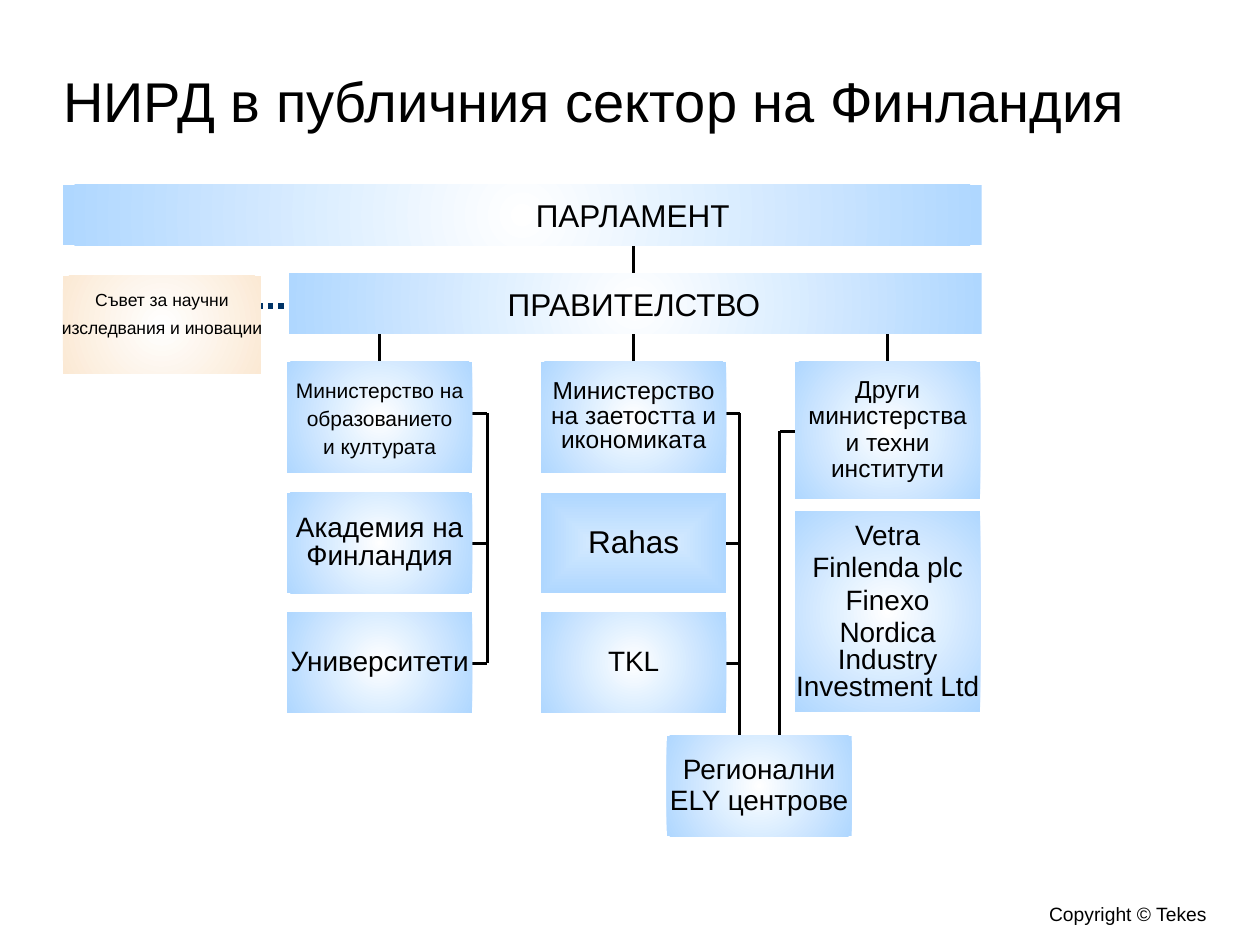
from dataclasses import dataclass, field
from typing import Any

from lxml.etree import SubElement
from pptx import Presentation
from pptx.dml.color import RGBColor
from pptx.enum.dml import MSO_LINE
from pptx.enum.shapes import MSO_CONNECTOR, MSO_SHAPE
from pptx.enum.text import MSO_ANCHOR, MSO_AUTO_SIZE, PP_ALIGN
from pptx.oxml import parse_xml
from pptx.oxml.ns import nsdecls, qn
from pptx.util import Cm, Pt


@dataclass(frozen=True)
class Theme:
    font: str = "Arial"
    ink: str = "000000"
    navy: str = "003366"
    white: str = "FFFFFF"
    pale: str = "D3E9FF"
    blue: str = "AFD7FF"
    sand: str = "FBE9D4"
    title: int = 32
    head: int = 18
    body: int = 16
    mid: int = 14
    small: int = 12
    foot: int = 11
    tiny: int = 10


THEME = Theme()


@dataclass(frozen=True)
class Box:
    """A gradient box; lengths in centimetres, a gap in points between paragraphs."""
    left: float
    top: float
    width: float
    height: float
    lines: tuple[str, ...]
    size: int = THEME.body
    lead: Any = 0.9
    gap: float = 0
    inner: str = THEME.white
    outer: str = THEME.blue
    blend: str = "circle"
    frame: dict[str, Any] = field(default_factory=dict)


@dataclass(frozen=True)
class Line:
    x1: float
    y1: float
    x2: float
    y2: float
    color: str = THEME.ink
    width: float = 1.75
    dash: Any = None


LEFT = 1.27
COLS = [5.79 + 5.12 * i for i in range(3)]
ROWS = [7.29, 9.93, 12.34]
WIDE, HIGH, TALL = 3.73, 2.03, 2.24
MIDS = [col + WIDE / 2 for col in COLS]
LINKS = [8.33, 10.95, 13.37]
STUB = 0.54
NARROW = {"margin_left": Cm(0.1), "margin_right": Cm(0.1), "word_wrap": True}

BOXES = [
    Box(LEFT, 3.73, 18.52, 1.22, ("ПАРЛАМЕНТ",), THEME.head, 1.0,
        frame={"margin_left": Cm(4.45)}),
    Box(5.82, 5.51, 13.97, 1.22, ("ПРАВИТЕЛСТВО",), THEME.head, 1.0,
        frame={"margin_right": Cm(0.05)}),
    Box(LEFT, 5.56, 3.99, 1.98, ("Съвет за научни", "изследвания и иновации"),
        THEME.tiny, Pt(16), outer=THEME.sand,
        frame={"vertical_anchor": MSO_ANCHOR.TOP, "margin_top": Cm(0.13)}),
    Box(COLS[0], ROWS[0], WIDE, TALL,
        ("Министерство на", "образованието", "и културата"), THEME.small, Pt(16)),
    Box(COLS[0], ROWS[1], WIDE, HIGH, ("Академия на", "Финландия"), lead=Pt(16)),
    Box(COLS[0], ROWS[2], WIDE, HIGH, ("Университети",)),
    Box(COLS[1], ROWS[0], WIDE, TALL, ("Министерство на заетостта и икономиката",),
        THEME.mid, Pt(14), frame=NARROW),
    Box(COLS[1], ROWS[1], WIDE, HIGH, ("Rahas",), THEME.head,
        inner=THEME.pale, blend="shape"),
    Box(COLS[1], ROWS[2], WIDE, HIGH, ("TKL",)),
    Box(COLS[2], ROWS[0], WIDE, 2.77,
        ("Други", "министерства", "и техни", "институти"), THEME.mid),
    Box(COLS[2], 10.31, WIDE, 4.04,
        ("Vetra", "Finlenda plc", "Finexo", "Nordica\nIndustry\nInvestment Ltd"),
        lead=0.8, gap=3.2,
        frame={"vertical_anchor": MSO_ANCHOR.TOP, "margin_top": Cm(0.25)}),
    Box(13.44, 14.83, WIDE, HIGH, ("Регионални\nELY центрове",)),
]


def fork(x: float, end: float) -> list[Line]:
    """A trunk at x down to end, with a stub to each box on its left."""
    return [Line(x - STUB, y, x, y) for y in LINKS] + [Line(x, LINKS[0], x, end)]


LINES = [
    Line(4.55, 6.17, 5.89, 6.17, THEME.navy, 3, MSO_LINE.ROUND_DOT),
    Line(MIDS[1], 4.93, MIDS[1], 5.6),
    *(Line(x, 6.6, x, 7.65) for x in MIDS),
    *fork(9.82, LINKS[-1]),
    *fork(14.91, 16.2),
    Line(16.26, 8.69, 15.72, 8.69),
    Line(15.72, 8.69, 15.72, 15.95),
]


def assign(target: Any, values: dict[str, Any]) -> None:
    for name, value in values.items():
        setattr(target, name, value)


def write(shape: Any, lines: tuple[str, ...], size: int, frame: dict[str, Any],
          para: dict[str, Any], gap: float = 0) -> None:
    text = shape.text_frame
    sides = ("left", "top", "right", "bottom")
    assign(text, {f"margin_{side}": 0 for side in sides}
           | {"word_wrap": False, "auto_size": MSO_AUTO_SIZE.NONE,
              "vertical_anchor": MSO_ANCHOR.MIDDLE} | frame)
    for i, line in enumerate(lines):
        item = text.add_paragraph() if i else text.paragraphs[0]
        item.text = line
        assign(item, para)
        if i and gap:
            item.space_before = Pt(gap)
        for run in item.runs:
            assign(run.font, {"name": THEME.font, "size": Pt(size)})
            run.font.color.rgb = RGBColor.from_string(THEME.ink)
        for brk in item._p.iter(qn("a:br")):
            SubElement(brk, qn("a:rPr"), sz=str(size * 100))


def shade(shape: Any, box: Box) -> None:
    """Fill from the centre of the box outwards."""
    stops = "".join(f'<a:gs pos="{pos}"><a:srgbClr val="{color}"/></a:gs>'
                    for pos, color in ((0, box.inner), (100000, box.outer)))
    shape.fill.background()
    old = shape._element.spPr.find(qn("a:noFill"))
    old.getparent().replace(old, parse_xml(
        f'<a:gradFill {nsdecls("a")} rotWithShape="0"><a:gsLst>{stops}</a:gsLst>'
        f'<a:path path="{box.blend}"><a:fillToRect l="50000" t="50000" '
        'r="50000" b="50000"/></a:path></a:gradFill>'))


def draw_box(slide: Any, box: Box) -> None:
    shape = slide.shapes.add_shape(
        MSO_SHAPE.RECTANGLE, Cm(box.left), Cm(box.top), Cm(box.width), Cm(box.height))
    shape.shadow.inherit = False
    shape.line.fill.background()
    shade(shape, box)
    write(shape, box.lines, box.size, box.frame,
          {"alignment": PP_ALIGN.CENTER, "line_spacing": box.lead}, box.gap)


def draw_line(slide: Any, line: Line) -> None:
    link = slide.shapes.add_connector(
        MSO_CONNECTOR.STRAIGHT, Cm(line.x1), Cm(line.y1), Cm(line.x2), Cm(line.y2))
    link.line.color.rgb = RGBColor.from_string(line.color)
    link.line.width = Pt(line.width)
    if line.dash:
        link.line.dash_style = line.dash
    SubElement(link._element.spPr, qn("a:effectLst"))


def main() -> None:
    deck = Presentation()
    assign(deck, {"slide_width": Cm(25.4), "slide_height": Cm(19.05)})
    slide = deck.slides.add_slide(deck.slide_layouts[5])

    title = slide.shapes.title
    assign(title, {"left": Cm(LEFT), "top": Cm(1.5),
                   "width": Cm(21.79), "height": Cm(2.46)})
    write(title, ("НИРД в публичния сектор на Финландия",), THEME.title,
          {"word_wrap": True, "vertical_anchor": MSO_ANCHOR.TOP},
          {"alignment": PP_ALIGN.LEFT, "line_spacing": 0.9})

    for line in LINES:
        draw_line(slide, line)
    for box in BOXES:
        draw_box(slide, box)

    foot = slide.shapes.add_textbox(Cm(20.93), Cm(18.16), Cm(3.4), Cm(0.51))
    write(foot, ("Copyright © Tekes",), THEME.foot, {"word_wrap": True},
          {"alignment": PP_ALIGN.RIGHT})
    deck.save("out.pptx")


if __name__ == "__main__":
    main()
